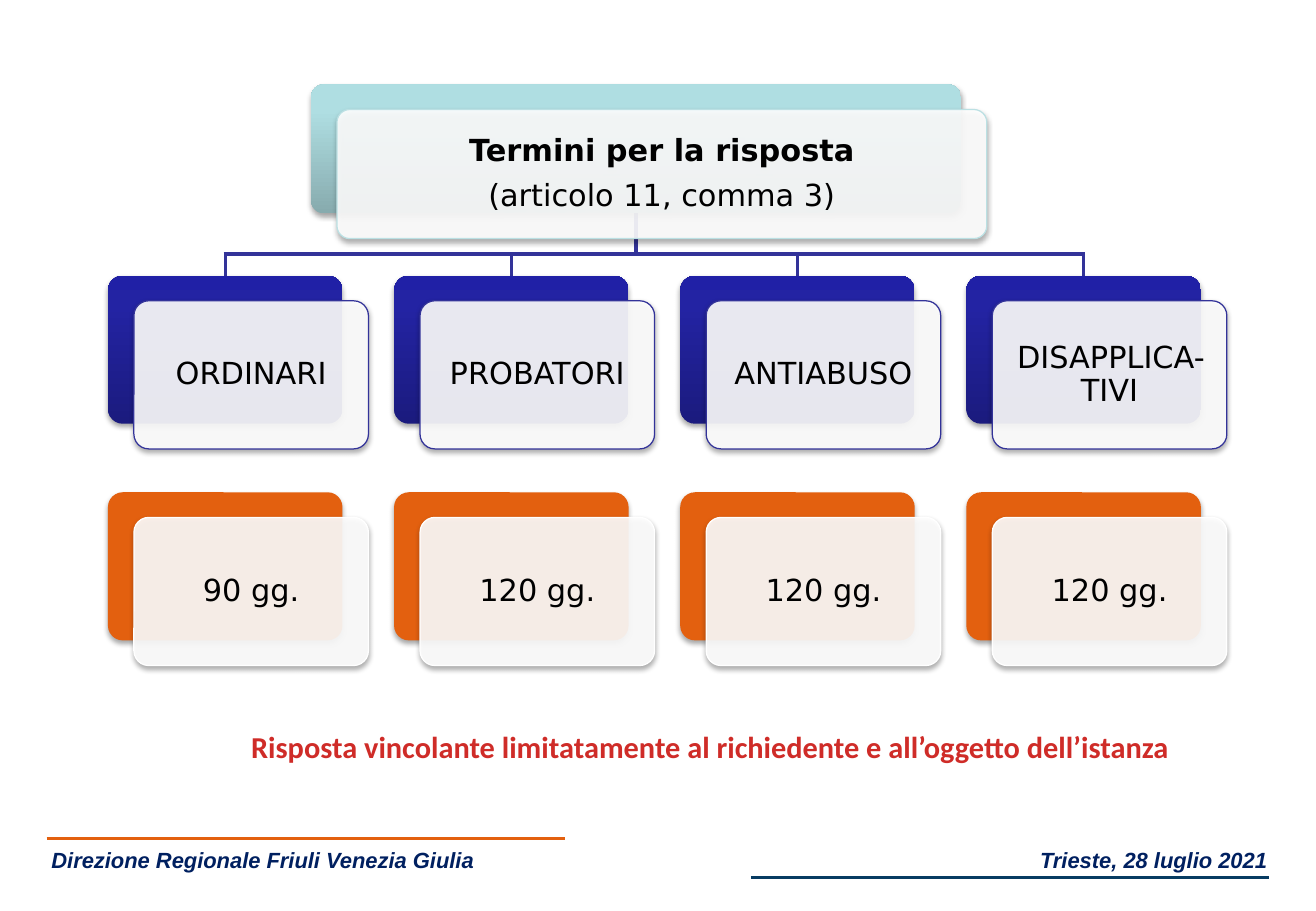
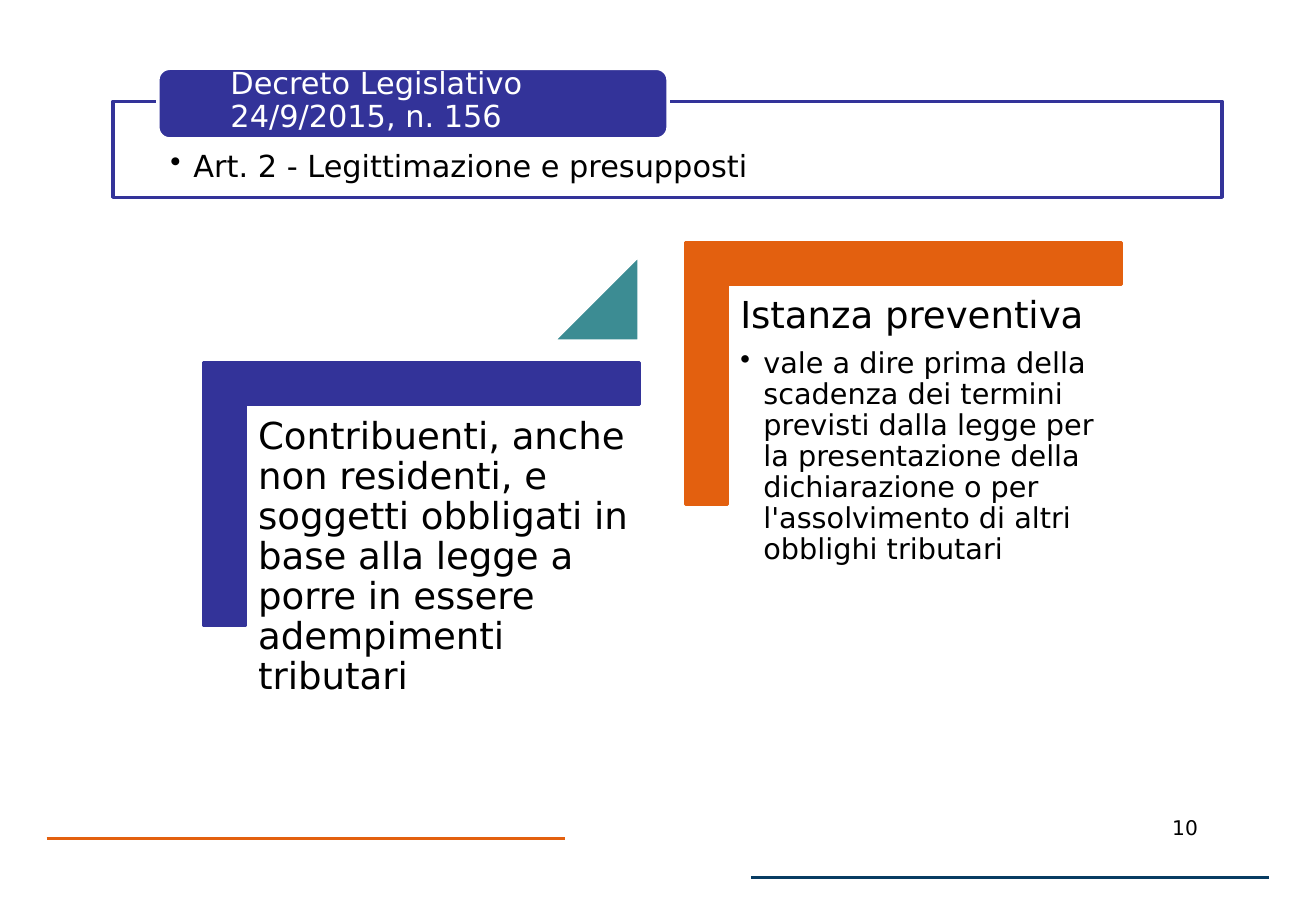
from lxml.etree import SubElement
from pptx import Presentation
from pptx.dml.color import RGBColor
from pptx.enum.shapes import MSO_CONNECTOR as CONNECTOR, MSO_SHAPE as SHAPE
from pptx.enum.text import MSO_ANCHOR as ANCHOR, PP_ALIGN as ALIGN
from pptx.oxml.ns import qn
from pptx.util import Pt

FONT = "DejaVu Sans"
BLACK, WHITE, NAVY, INDIGO, ORANGE = "000000", "FFFFFF", "002060", "333399", "E3600F"
BLUE, AQUA, TEAL, RED = "073C62", "BBE0E3", "3C8C93", "CF2C28"
AQUA_FADE = [(0, "87ABAE"), (80, "AFDEE2"), (100, "AFE0E4")]
INDIGO_FADE = [(0, "1B1B7E"), (80, "2323A3"), (100, "2020A6")]

FOOTER_LINES = [((27.6, 497), (334.8, 497), ORANGE), ((445, 520), (752.4, 520), BLUE)]
FOOTER_TEXTS = [
    ("Direzione Regionale Friuli Venezia Giulia", (24, 498.2, 293, 22.3), ALIGN.LEFT),
    ("Trieste, 28 luglio 2021", (500.4, 498.2, 257, 22.3), ALIGN.RIGHT),
]

ROOT_TEXTS = [("Termini per la risposta", {"bold": True}), ("(articolo 11, comma 3)", {})]
ROOT_BOX = (184.3, 50, 385.2, 76.5)
TERMS = [
    ("ORDINARI", "90 gg."),
    ("PROBATORI", "120 gg."),
    ("ANTIABUSO", "120 gg."),
    ("DISAPPLICA-TIVI", "120 gg."),
]
CARD_SIZE = (139, 87.8)
CARD_LEFT, CARD_PITCH = 64, 169.6
TYPE_TOP, DAYS_TOP, BUS_TOP = 163.4, 291.8, 150.5
FRONT_SHIFT = (15.4, 14.9)
NOTE = "Risposta vincolante limitatamente al richiedente e all’oggetto dell’istanza"

DECREE = "Decreto Legislativo 24/9/2015, n. 156"
ARTICLE = "Art. 2 - Legittimazione e presupposti"
STEPS = [
    ((120.6, 214.9), INDIGO, [
        ("Contribuenti, anche non residenti, e soggetti obbligati in base alla legge "
         "a porre in essere adempimenti tributari", {"size": 22}),
    ]),
    ((406.4, 143.6), ORANGE, [
        ("Istanza preventiva", {"size": 22}),
        ("vale a dire prima della scadenza dei termini previsti dalla legge per la "
         "presentazione della dichiarazione o per l'assolvimento di altri obblighi "
         "tributari", {"size": 17, "bullet": True, "after": 3}),
    ]),
]
STEP_SIZE, STEP_BAND, STEP_INSET = (258.5, 155.5), 25, 25.8
PAGE_NUMBER = "10"


def color(value):
    return RGBColor.from_string(value)


def write(shape, items, insets=(7.2, 3.6, 7.2, 3.6), anchor=ANCHOR.TOP, **common):
    frame = shape.text_frame
    frame.word_wrap = True
    frame.vertical_anchor = anchor
    frame.margin_left, frame.margin_top, frame.margin_right, frame.margin_bottom = map(Pt, insets)
    frame.text = "\n".join(text for text, _ in items)
    for paragraph, (_, own) in zip(frame.paragraphs, items):
        style = {"size": 18, "font": FONT, "color": BLACK, "align": ALIGN.LEFT,
                 "spacing": 0.9, "after": 7, **common, **own}
        if style.get("bullet"):
            properties = paragraph._p.get_or_add_pPr()
            properties.set("marL", str(Pt(13.7)))
            properties.set("indent", str(-Pt(13.7)))
            SubElement(properties, qn("a:buChar"), char="•")
        paragraph.alignment = style["align"]
        paragraph.line_spacing = style["spacing"]
        paragraph.space_after = Pt(style["after"])
        for run in paragraph.runs:
            run.font.name = style["font"]
            run.font.size = Pt(style["size"])
            run.font.bold = style.get("bold", False)
            run.font.italic = style.get("italic", False)
            run.font.color.rgb = color(style["color"])


def add_text(slide, box, items, **style):
    write(slide.shapes.add_textbox(*map(Pt, box)), items, **style)


def add_line(slide, start, end, line_color):
    line = slide.shapes.add_connector(CONNECTOR.STRAIGHT, *map(Pt, start + end))
    line.line.color.rgb = color(line_color)
    line.line.width = Pt(2)
    SubElement(line._element.spPr, qn("a:effectLst"))


def paint(shape, fill, line=None, width=2):
    shape.shadow.inherit = False
    if isinstance(fill, list):
        shape.fill.gradient()
        shape.fill.gradient_angle = 90
        stops = shape._element.spPr.find(".//" + qn("a:gsLst"))
        for stop in list(stops):
            stops.remove(stop)
        for position, value in fill:
            stop = SubElement(stops, qn("a:gs"), pos=str(position * 1000))
            SubElement(stop, qn("a:srgbClr"), val=value)
    else:
        shape.fill.solid()
        shape.fill.fore_color.rgb = color(fill)
    if line:
        shape.line.color.rgb = color(line)
        shape.line.width = Pt(width)
    else:
        shape.line.fill.background()


def add_shape(slide, kind, box, fill, line=None, width=2, adjust=()):
    shape = slide.shapes.add_shape(kind, *map(Pt, box))
    for index, value in enumerate(adjust):
        shape.adjustments[index] = value
    paint(shape, fill, line, width)
    return shape


def add_corner(slide, left, top, fill):
    width, height = STEP_SIZE
    right, bottom = left + width, top + height
    inner_left, inner_top = left + STEP_BAND, top + STEP_BAND
    points = [(right, top), (right, inner_top), (inner_left, inner_top),
              (inner_left, bottom), (left, bottom)]
    builder = slide.shapes.build_freeform(Pt(left), Pt(top))
    builder.add_line_segments([(Pt(x), Pt(y)) for x, y in points], close=True)
    paint(builder.convert_to_shape(), fill, fill)


def add_shadow(shape):
    effects = shape._element.spPr.find(qn("a:effectLst"))
    shadow = SubElement(effects, qn("a:outerShdw"), blurRad=str(Pt(3.1)), dist=str(Pt(1.8)),
                        dir="5400000", algn="t", rotWithShape="0")
    tint = SubElement(shadow, qn("a:srgbClr"), val=BLACK)
    SubElement(tint, qn("a:alpha"), val="35000")


def add_card(slide, box, fill, outline, items):
    left, top, width, height = box
    front_box = (left + FRONT_SHIFT[0], top + FRONT_SHIFT[1], width, height)
    back = add_shape(slide, SHAPE.ROUNDED_RECTANGLE, box, fill, adjust=[0.1])
    front = add_shape(slide, SHAPE.ROUNDED_RECTANGLE, front_box, WHITE, outline, 0.75, [0.1])
    tint = front._element.spPr.find(qn("a:solidFill")).find(qn("a:srgbClr"))
    SubElement(tint, qn("a:alpha"), val="90000")
    for shape in (back, front):
        add_shadow(shape)
    write(front, items, insets=(7.6,) * 4, anchor=ANCHOR.MIDDLE, align=ALIGN.CENTER)


def add_slide(presentation):
    slide = presentation.slides.add_slide(presentation.slide_layouts[6])
    for start, end, line_color in FOOTER_LINES:
        add_line(slide, start, end, line_color)
    return slide


def build_terms(presentation):
    slide = add_slide(presentation)
    for text, box, align in FOOTER_TEXTS:
        add_text(slide, box, [(text, {})], insets=(6.5, 3.6, 6.5, 3.6), size=13, font="Arial",
                 color=NAVY, bold=True, italic=True, align=align, spacing=1, after=0)
    width, height = CARD_SIZE
    lefts = [CARD_LEFT + CARD_PITCH * index for index in range(len(TERMS))]
    centers = [left + width / 2 for left in lefts]
    root_left, root_top, root_width, root_height = ROOT_BOX
    root_center = root_left + root_width / 2
    add_line(slide, (root_center, root_top + root_height), (root_center, BUS_TOP), INDIGO)
    add_line(slide, (centers[0] - 1, BUS_TOP), (centers[-1] + 1, BUS_TOP), INDIGO)
    for center in centers:
        add_line(slide, (center, BUS_TOP), (center, TYPE_TOP), INDIGO)
    add_card(slide, ROOT_BOX, AQUA_FADE, AQUA, ROOT_TEXTS)
    for left, (kind, days) in zip(lefts, TERMS):
        add_card(slide, (left, TYPE_TOP, width, height), INDIGO_FADE, INDIGO, [(kind, {})])
        add_card(slide, (left, DAYS_TOP, width, height), ORANGE, WHITE, [(days, {})])
    add_text(slide, (111, 424.8, 620, 32.4), [(NOTE, {})], font="Calibri", color=RED,
             bold=True, align=ALIGN.CENTER, spacing=1.15, after=10)


def build_requirements(presentation):
    slide = add_slide(presentation)
    add_text(slide, (668.2, 479.5, 68.4, 28), [(PAGE_NUMBER, {})], size=12,
             align=ALIGN.CENTER, spacing=1, after=0)
    panel = add_shape(slide, SHAPE.RECTANGLE, (67, 60, 657.4, 57), WHITE, INDIGO)
    write(panel, [(ARTICLE, {"bullet": True, "after": 3})], insets=(34, 29.5, 34, 10))
    label = add_shape(slide, SHAPE.ROUNDED_RECTANGLE, (93.6, 40.5, 302.4, 41.8), INDIGO, WHITE)
    write(label, [(DECREE, {})], insets=(41, 0, 0, 3), anchor=ANCHOR.MIDDLE, color=WHITE)
    for (left, top), fill, items in STEPS:
        add_corner(slide, left, top, fill)
        add_text(slide, (left + STEP_INSET, top + STEP_INSET, 233.4, 204.6), items,
                 insets=(6.6,) * 4)
    add_shape(slide, SHAPE.ISOSCELES_TRIANGLE, (327.8, 151.2, 51, 51), TEAL, WHITE, adjust=[1])


def main():
    presentation = Presentation()
    presentation.slide_width, presentation.slide_height = Pt(780), Pt(540)
    build_terms(presentation)
    build_requirements(presentation)
    presentation.save("out.pptx")


if __name__ == "__main__":
    main()
